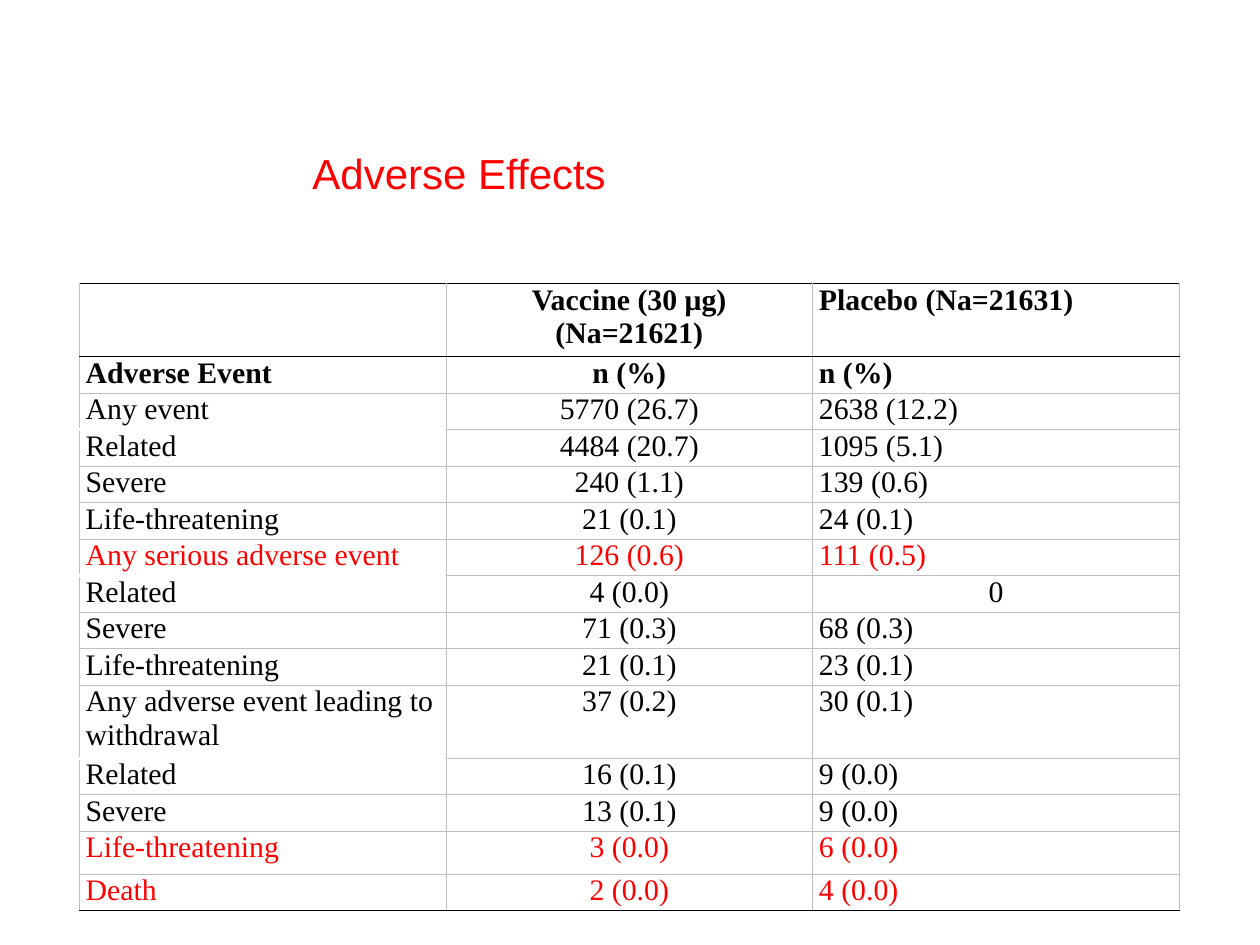
import pptx
import pptx.dml.color
import pptx.enum.text
import pptx.oxml
import pptx.oxml.ns
import pptx.util

BLACK, RED, GRAY, WHITE = "000000", "FF0000", "BFBFBF", "FFFFFF"
THIN, RULE, GAP = (GRAY, 0.6), (BLACK, 1.13), (WHITE, 1.65)
ALIGN = pptx.enum.text.PP_ALIGN
COL_W, ROW_H = 2.91, 0.29
ROW_HEIGHTS = {0: 2 * ROW_H, 10: 2 * ROW_H, 13: 0.34}
HEADER_ROWS = 2
RED_ROWS = {6, 13, 14}
GROUP_ROWS = {2, 6, 10}  # no visible line below their first cell
ROWS = [
    ("", "Vaccine (30 μg)\n(Na=21621)", "Placebo (Na=21631)"),
    ("Adverse Event", "n (%)", "n (%)"),
    ("Any event", "5770 (26.7)", "2638 (12.2)"),
    ("Related", "4484 (20.7)", "1095 (5.1)"),
    ("Severe", "240 (1.1)", "139 (0.6)"),
    ("Life-threatening", "21 (0.1)", "24 (0.1)"),
    ("Any serious adverse event", "126 (0.6)", "111 (0.5)"),
    ("Related", "4 (0.0)", "0"),
    ("Severe", "71 (0.3)", "68 (0.3)"),
    ("Life-threatening", "21 (0.1)", "23 (0.1)"),
    ("Any adverse event leading to withdrawal", "37 (0.2)", "30 (0.1)"),
    ("Related", "16 (0.1)", "9 (0.0)"),
    ("Severe", "13 (0.1)", "9 (0.0)"),
    ("Life-threatening", "3 (0.0)", "6 (0.0)"),
    ("Death", "2 (0.0)", "4 (0.0)"),
]


def inches(*values):
    return [pptx.util.Inches(v) for v in values]


def set_font(p, name, size, color, bold=False):
    p.font.name = name
    p.font.size = pptx.util.Pt(size)
    p.font.bold = bold
    p.font.color.rgb = pptx.dml.color.RGBColor.from_string(color)


def add_title(s, text):
    sp = s.shapes.title
    sp.left, sp.top, sp.width, sp.height = inches(2.38, 1.12, 4.74, 0.5)
    tf = sp.text_frame
    tf.text = text
    tf.vertical_anchor = pptx.enum.text.MSO_ANCHOR.MIDDLE
    p = tf.paragraphs[0]
    p.alignment = ALIGN.LEFT
    set_font(p, "Arial", 24, RED)


def line_at(edge, col):
    """Colour and width of the horizontal line above row number edge."""
    if edge in (0, 1, len(ROWS)):
        return RULE
    return GAP if col == 0 and edge - 1 in GROUP_ROWS else THIN


def set_borders(cell, **lines):
    tcPr = cell._tc.get_or_add_tcPr()
    for side, (color, width) in lines.items():
        tcPr.append(pptx.oxml.parse_xml(
            f'<a:ln{side} {pptx.oxml.ns.nsdecls("a")} w="{pptx.util.Pt(width)}">'
            f'<a:solidFill><a:srgbClr val="{color}"/></a:solidFill></a:ln{side}>'))


def fill_cell(cell, row, col, text):
    cell.margin_left = cell.margin_right = pptx.util.Inches(0.05)
    cell.margin_top = cell.margin_bottom = 0
    set_borders(cell, L=THIN, R=THIN, T=line_at(row, col), B=line_at(row + 1, col))
    cell.fill.background()
    cell.text = text
    for p in cell.text_frame.paragraphs:
        p.alignment = ALIGN.CENTER if col == 1 or text == "0" else ALIGN.LEFT
        set_font(p, "Times New Roman", 17, RED if row in RED_ROWS else BLACK,
                 row < HEADER_ROWS)


def add_events_table(s):
    heights = [ROW_HEIGHTS.get(i, ROW_H) for i in range(len(ROWS))]
    n_cols = len(ROWS[0])
    table = s.shapes.add_table(
        len(ROWS), n_cols, *inches(0.63, 2.25, n_cols * COL_W, sum(heights))).table
    table.first_row = table.horz_banding = False
    for column in table.columns:
        column.width = pptx.util.Inches(COL_W)
    for i, texts in enumerate(ROWS):
        table.rows[i].height = pptx.util.Inches(heights[i])
        for j, text in enumerate(texts):
            fill_cell(table.cell(i, j), i, j, text)


def main():
    prs = pptx.Presentation()
    prs.slide_width, prs.slide_height = inches(10, 7.5)
    s = prs.slides.add_slide(prs.slide_layouts[5])
    add_title(s, "Adverse Effects")
    add_events_table(s)
    prs.save("out.pptx")


if __name__ == "__main__":
    main()
